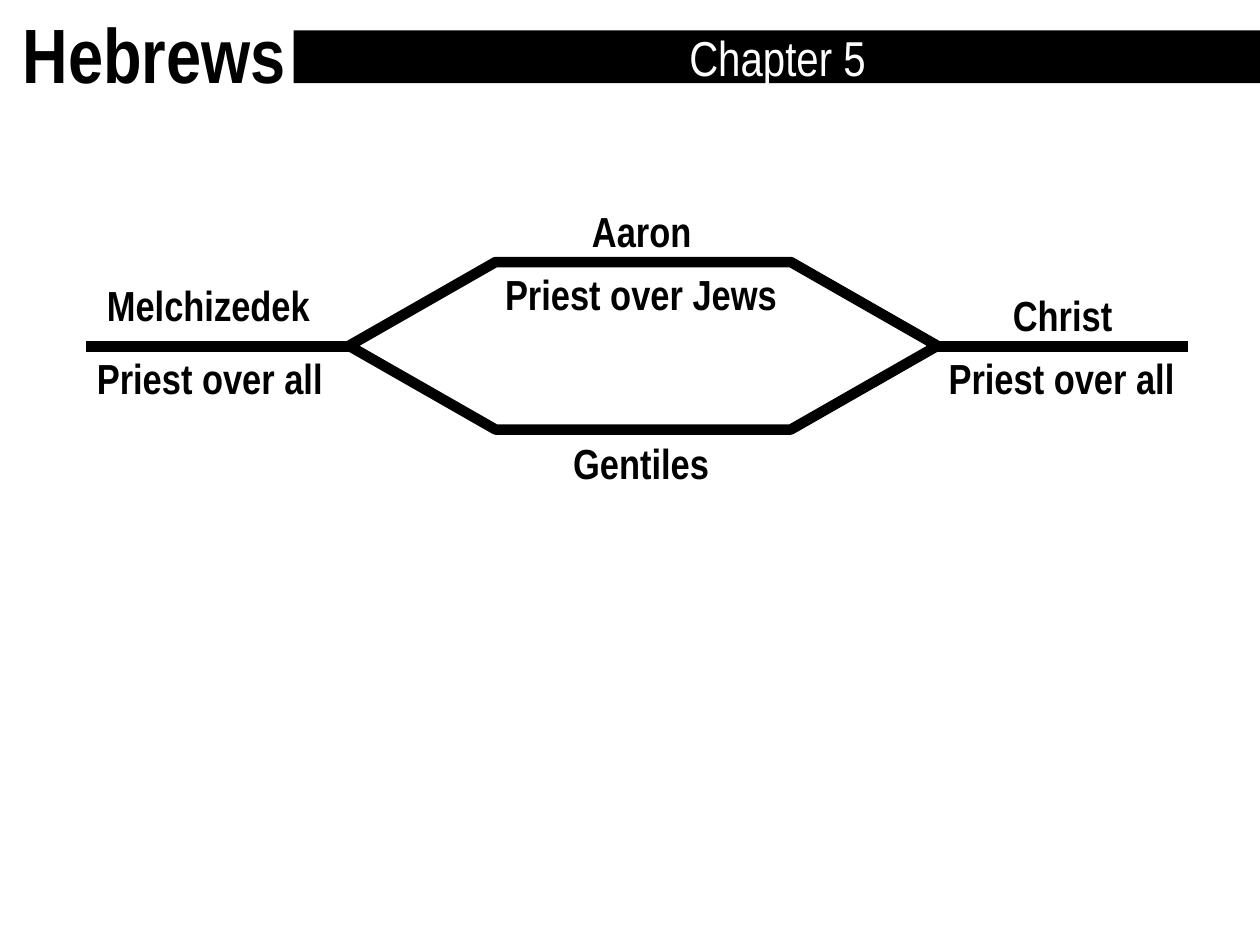
"""Build the Hebrews chapter 5 slide on the priesthoods of Melchizedek, Aaron and Christ."""
from dataclasses import dataclass

from lxml import etree
from pptx import Presentation
from pptx.dml.color import RGBColor
from pptx.enum import shapes, text
from pptx.oxml import ns
from pptx.util import Inches, Pt

COLORS = {"ink": "000000", "paper": "FFFFFF"}
FONT = "Arial Narrow"
LINE_WIDTH = Pt(6)
AXIS_Y = 2.75


@dataclass
class Label:
    """A bold caption and its place in inches."""
    wording: str
    left: float
    top: float
    width: float


@dataclass
class Branch:
    """A horizontal line on the axis, in inches."""
    start: float
    end: float


LABELS = [
    Label("Melchizedek", 0.75, 2.17, 1.83),
    Label("Priest over all", 0.67, AXIS_Y, 2.02),
    Label("Christ", 7.94, 2.25, 1),
    Label("Priest over all", 7.43, AXIS_Y, 2.02),
    Label("Priest over Jews", 3.91, 2.08, 2.39),
    Label("Aaron", 4.6, 1.58, 1),
    Label("Gentiles", 4.45, 3.42, 1.29),
]
BRANCHES = [Branch(2.77, 0.68), Branch(9.43, 7.35)]


def color(name: str) -> RGBColor:
    """Look up a named colour."""
    return RGBColor.from_string(COLORS[name])


def write(shape, wording: str, size: int, ink: str = "ink", bold: bool = True,
          align=text.PP_ALIGN.LEFT) -> None:
    """Put one formatted paragraph in a shape."""
    shape.text_frame.text = wording
    para = shape.text_frame.paragraphs[0]
    para.alignment = align
    font = para.runs[0].font
    font.name, font.size, font.bold = FONT, Pt(size), bold
    font.color.rgb = color(ink)


def stroke(line) -> None:
    """Give a line the diagram's heavy stroke."""
    line.color.rgb = color("ink")
    line.width = LINE_WIDTH


def add_title(page) -> None:
    """Place the book name in the title placeholder."""
    title = page.shapes.title
    title.left, title.top = Inches(0.08), Inches(0)
    title.width, title.height = Inches(9.93), Inches(0.84)
    write(title, "Hebrews", 44)
    title.text_frame.vertical_anchor = text.MSO_ANCHOR.TOP
    title.text_frame.auto_size = text.MSO_AUTO_SIZE.SHAPE_TO_FIT_TEXT


def add_chapter_bar(page) -> None:
    """Draw the black bar with the chapter number."""
    bar = page.shapes.add_shape(shapes.MSO_SHAPE.RECTANGLE, Inches(2.33), Inches(0.24),
                                Inches(7.68), Inches(0.42))
    bar.shadow.inherit = False
    bar.fill.solid()
    bar.fill.fore_color.rgb = color("ink")
    bar.line.fill.background()
    write(bar, "Chapter 5", 28, "paper", False, text.PP_ALIGN.CENTER)
    bar.text_frame.vertical_anchor = text.MSO_ANCHOR.MIDDLE


def add_hexagon(page) -> None:
    """Draw the split between Jews and Gentiles."""
    hexagon = page.shapes.add_shape(shapes.MSO_SHAPE.HEXAGON, Inches(2.77), Inches(2.08),
                                    Inches(4.67), Inches(1.33))
    hexagon.adjustments[0] = 0.875
    hexagon.shadow.inherit = False
    hexagon.fill.background()
    stroke(hexagon.line)


def add_branch(page, branch: Branch) -> None:
    """Draw one line along the axis."""
    line = page.shapes.add_connector(shapes.MSO_CONNECTOR.STRAIGHT, Inches(branch.start),
                                     Inches(AXIS_Y), Inches(branch.end), Inches(AXIS_Y))
    stroke(line.line)
    etree.SubElement(line._element.spPr, ns.qn("a:effectLst"))


def add_label(page, label: Label) -> None:
    """Draw one caption."""
    box = page.shapes.add_textbox(Inches(label.left), Inches(label.top),
                                  Inches(label.width), Inches(0.5))
    box.text_frame.word_wrap = False
    box.text_frame.auto_size = text.MSO_AUTO_SIZE.SHAPE_TO_FIT_TEXT
    write(box, label.wording, 24)


def main() -> None:
    """Assemble and save the deck."""
    deck = Presentation()
    deck.slide_width, deck.slide_height = Inches(10), Inches(7.5)
    page = deck.slides.add_slide(deck.slide_layouts.get_by_name("Title Only"))
    page.background.fill.solid()
    page.background.fill.fore_color.rgb = color("paper")
    add_hexagon(page)
    for branch in BRANCHES:
        add_branch(page, branch)
    for label in LABELS:
        add_label(page, label)
    add_title(page)
    add_chapter_bar(page)
    deck.save("out.pptx")


if __name__ == "__main__":
    main()
